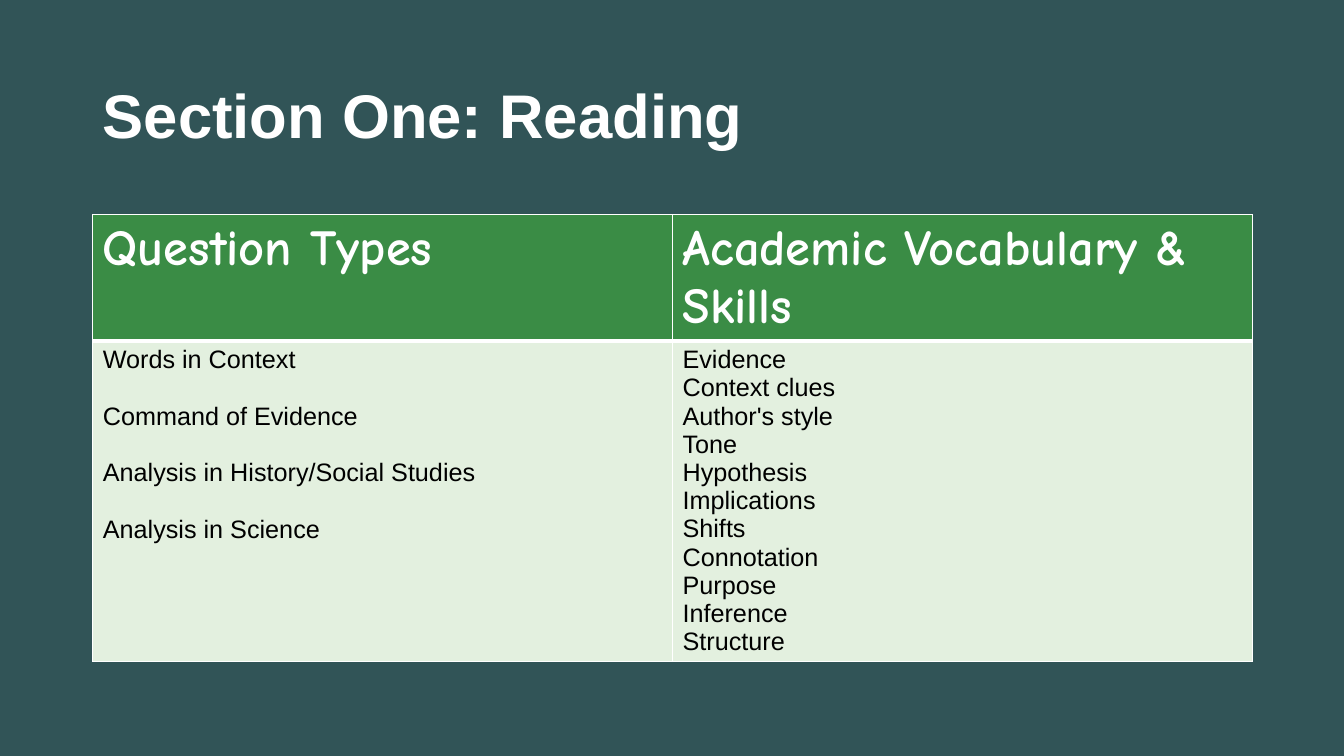
from lxml import etree
from pptx import Presentation
from pptx.dml.color import RGBColor
from pptx.enum.text import MSO_ANCHOR, PP_ALIGN
from pptx.oxml.ns import qn
from pptx.util import Inches, Pt

LEFT, MIDDLE = PP_ALIGN.LEFT, MSO_ANCHOR.MIDDLE
TEAL = RGBColor(0x31, 0x54, 0x57)
GREEN = RGBColor(0x3A, 0x8C, 0x45)
PALE_GREEN = RGBColor(0xE3, 0xF0, 0xDF)
WHITE = RGBColor(0xFF, 0xFF, 0xFF)
BLACK = RGBColor(0x00, 0x00, 0x00)

TITLE = "Section One: Reading"
COLUMNS = {
    "Question Types": [
        "Words in Context", "Command of Evidence",
        "Analysis in History/Social Studies", "Analysis in Science",
    ],
    "Academic Vocabulary & Skills": [
        "Evidence", "Context clues", "Author's style", "Tone", "Hypothesis",
        "Implications", "Shifts", "Connotation", "Purpose", "Inference", "Structure",
    ],
}
ITEM_GAPS = [Pt(20.2), Pt(0)]
HEADER_HEIGHT = Inches(1.25)
RULE_WIDTH = Pt(3)


def style_font(font, name, size, color, bold):
    """Set the typeface, size, colour and weight of a font."""
    font.name, font.size, font.bold = name, size, bold
    font.color.rgb = color


def set_borders(cell, top, bottom):
    """Give a cell white borders with the given top and bottom widths."""
    properties = cell._tc.get_or_add_tcPr()
    widths = {"a:lnL": Pt(1), "a:lnR": Pt(1), "a:lnT": top, "a:lnB": bottom}
    for side, width in widths.items():
        border = etree.SubElement(properties, qn(side), w=str(int(width)))
        fill = etree.SubElement(border, qn("a:solidFill"))
        etree.SubElement(fill, qn("a:srgbClr"), val=str(WHITE))


def fill_cell(cell, lines, background, gap, **font_style):
    """Write lines into a cell, one paragraph each, over a solid fill."""
    cell.fill.solid()
    cell.fill.fore_color.rgb = background
    cell.text_frame.text = "\n".join(lines)
    for index, paragraph in enumerate(cell.text_frame.paragraphs):
        if index:
            paragraph.space_before = gap
        for run in paragraph.runs:
            style_font(run.font, **font_style)


def add_title(slide, left, top, width, height):
    """Place and format the slide title in the given box."""
    title = slide.shapes.title
    title.left, title.top, title.width, title.height = left, top, width, height
    title.text_frame.text = TITLE
    title.text_frame.vertical_anchor = MIDDLE
    heading = title.text_frame.paragraphs[0]
    heading.alignment = LEFT
    style_font(heading.runs[0].font, "Arial", Pt(44), WHITE, True)


def add_reading_table(slide, left, top, width, height):
    """Build the table of question types and skills in the given box."""
    table = slide.shapes.add_table(2, len(COLUMNS), left, top, width, height).table
    table.rows[0].height = HEADER_HEIGHT
    table.rows[1].height = height - HEADER_HEIGHT
    for column, (header, items) in enumerate(COLUMNS.items()):
        header_cell, items_cell = table.cell(0, column), table.cell(1, column)
        set_borders(header_cell, Pt(1), RULE_WIDTH)
        set_borders(items_cell, RULE_WIDTH, Pt(1))
        fill_cell(header_cell, [header], GREEN, Pt(0),
                  name="Comic Neue", size=Pt(36), color=WHITE, bold=True)
        fill_cell(items_cell, items, PALE_GREEN, ITEM_GAPS[column],
                  name="Arial", size=Pt(18), color=BLACK, bold=False)


def main():
    """Build and save the presentation."""
    presentation = Presentation()
    presentation.slide_width, presentation.slide_height = Inches(13.33), Inches(7.5)
    slide = presentation.slides.add_slide(presentation.slide_layouts[5])
    slide.background.fill.solid()
    slide.background.fill.fore_color.rgb = TEAL
    left, width = Inches(0.92), Inches(11.5)
    add_title(slide, left, Inches(0.4), width, Inches(1.45))
    add_reading_table(slide, left, Inches(2.13), width, Inches(4.43))
    presentation.save("out.pptx")


if __name__ == "__main__":
    main()
